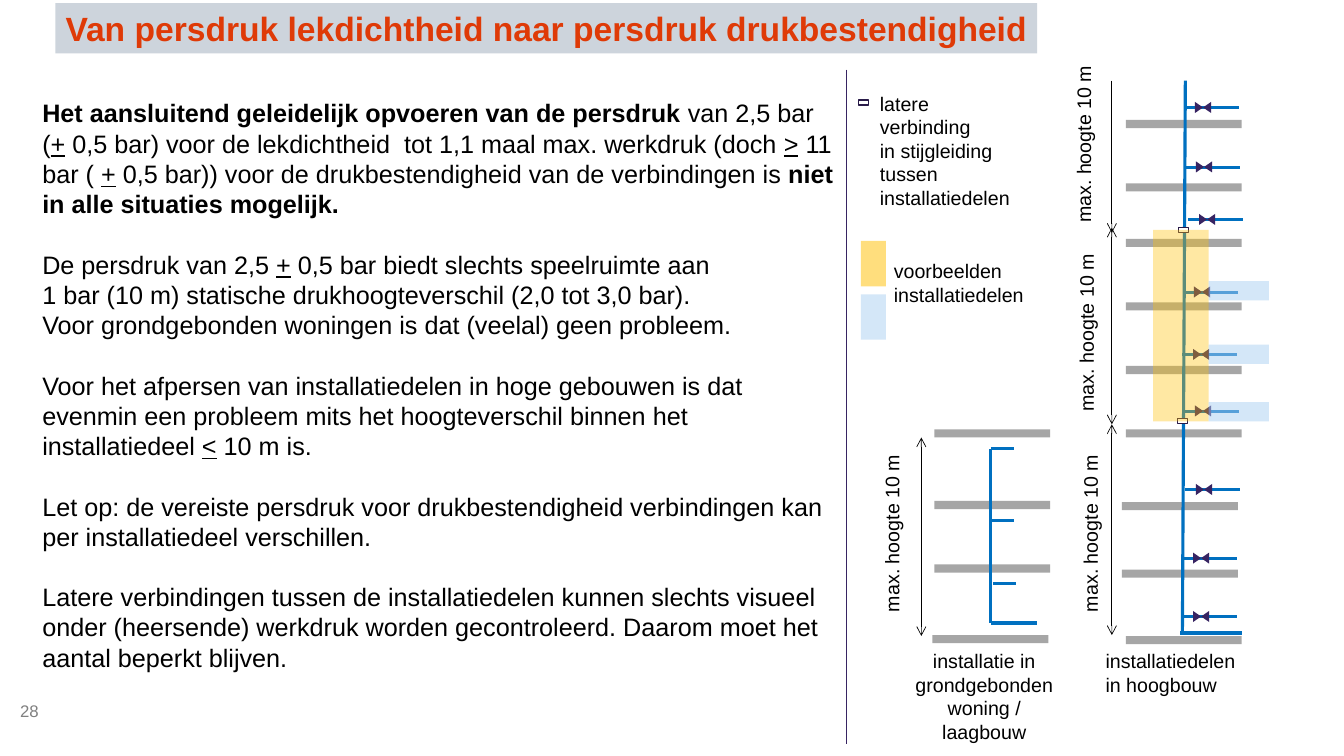
"""Build the slide on pressure testing in low and high buildings."""
from dataclasses import dataclass
from typing import Any

from lxml.etree import SubElement as Sub
from pptx import Presentation
from pptx.dml.color import RGBColor as Rgb
from pptx.enum.shapes import MSO_CONNECTOR as Conn, MSO_SHAPE as Geo
from pptx.enum.text import MSO_ANCHOR as Anchor, MSO_AUTO_SIZE as Auto, PP_ALIGN as Align
from pptx.oxml.ns import qn
from pptx.util import Pt

HEX = {
    "ink": "000000", "slab": "A6A6A6", "pipe": "0070C0", "valve": "372462",
    "edge": "291B49", "white": "FFFFFF", "gold": "FFC000", "sky": "ABD0F2",
    "band": "CDD4DC", "red": "DF3A07", "grey": "808080",
}
STYLE = {"": {}, "b": {"bold": True}, "u": {"underline": True}}


@dataclass
class Box:
    """A rectangle or other preset shape."""
    x: float
    y: float
    w: float
    h: float
    fill: str
    edge: str = ""
    alpha: int = 100
    turn: int = 0
    geo: Any = Geo.RECTANGLE


@dataclass
class Line:
    """A straight line with optional arrowheads."""
    x1: float
    y1: float
    x2: float
    y2: float
    hue: str = "pipe"
    width: float = 2.25
    ends: tuple[str, ...] = ()


@dataclass
class Label:
    """A small text box."""
    x: float
    y: float
    w: float
    h: float
    rows: list[str]
    turn: int = 0
    align: Any = Align.LEFT
    size: float = 14
    hue: str = "ink"


SLABS = [
    (667.4, 306.7), (667.4, 357.8), (667.4, 403.2), (666, 453.6),
    (804.2, 85.7), (804.2, 131), (804.2, 170.6), (804.2, 216), (804.2, 261.4),
    (804.2, 306.7), (801.4, 358.6), (801.4, 406.8), (804.2, 454.3),
]
BOTH = ("headEnd", "tailEnd")
SPANS = [
    (658.1, 312.5, 454.3, BOTH), (794.2, 57.6, 166.3, BOTH[1:]),
    (794.2, 162.7, 303.1, BOTH), (794.2, 303.1, 453.6, BOTH),
]
PIPES = [
    Line(707.8, 320.4, 707.8, 445), Line(707.8, 445, 740.9, 445, width=3),
    Line(846.7, 57.6, 844.6, 451.4), Line(843.1, 452.2, 887, 452.2, width=3),
    Line(707.8, 320.4, 724.3, 320.4), Line(707.8, 371.5, 724.3, 371.5),
    Line(709.2, 416.9, 725.8, 416.9),
]
JOINTS = [(841.7, 162.7), (841, 298.8), (613.4, 71.3)]
VALVES = [
    (846, 77), (846.7, 119.5), (848.9, 157), (845.3, 208.8), (844.6, 253.4),
    (846, 293.8), (846.7, 349.9), (844.6, 398.9), (844.6, 440.6),
]
ZONES = [
    Box(823.7, 164.2, 39.6, 136.8, "gold", alpha=36),
    *(Box(863.3, y, 43.2, 13.7, "sky", alpha=51) for y in (200.9, 246.2, 287.3)),
    Box(607.7, 217.4, 32.4, 18, "sky", alpha=51, turn=270),
    Box(607.7, 179.3, 32.4, 18, "gold", alpha=51, turn=270),
]
RISES = [(708.5, 88.6), (710.6, 223.2), (713.5, 366.5), (571.7, 366.5)]
LABELS = [
    *(Label(x, y, 131, 24.5, ["max. hoogte 10 m"], 270) for x, y in RISES),
    Label(621.4, 61.9, 111.6, 92.2,
          ["latere", "verbinding", "in stijgleiding", "tussen", "installatiedelen"]),
    Label(631.4, 181.4, 111.6, 41, ["voorbeelden", "installatiedelen"]),
    Label(644.4, 460.1, 117.4, 74.9,
          ["installatie in", "grondgebonden", "woning /", "laagbouw"], align=Align.CENTER),
    Label(782.6, 460.1, 111.6, 41, ["installatiedelen", "in hoogbouw"]),
]
TITLE = "Van persdruk lekdichtheid naar persdruk drukbestendigheid"
GAP = 21.6
BODY = [
    (0, [("Het aansluitend geleidelijk opvoeren van de persdruk ", "b"),
         ("van 2,5 bar (", ""), ("+", "u"),
         (" 0,5 bar) voor de lekdichtheid  tot 1,1 maal max. werkdruk (doch ", ""),
         (">", "u"), (" 11 bar ( ", ""), ("+", "u"),
         (" 0,5 bar)) voor de drukbestendigheid van de verbindingen is ", ""),
         ("niet in alle situaties mogelijk.", "b")]),
    (GAP, [("De persdruk van 2,5 ", ""), ("+", "u"),
           (" 0,5 bar biedt slechts speelruimte aan", ""), ("\n", ""),
           ("1 bar (10 m) statische drukhoogteverschil (2,0 tot 3,0 bar).", "")]),
    (0, [("Voor grondgebonden woningen is dat (veelal) geen probleem.", "")]),
    (GAP, [("Voor het afpersen van installatiedelen in hoge gebouwen is dat evenmin een "
            "probleem mits het hoogteverschil binnen het installatiedeel ", ""),
           ("<", "u"), (" 10 m is.", "")]),
    (GAP, [("Let op: de vereiste persdruk voor drukbestendigheid verbindingen kan per "
            "installatiedeel verschillen.", "")]),
    (GAP, [("Latere verbindingen tussen de installatiedelen kunnen slechts visueel onder "
            "(heersende) werkdruk worden gecontroleerd. Daarom moet het aantal beperkt "
            "blijven.", "")]),
]


def put(obj: Any, vals: dict[str, Any]) -> None:
    """Set each named attribute."""
    for key, val in vals.items():
        setattr(obj, key, val)


def rgb(hue: str) -> Rgb:
    """Look up a colour."""
    return Rgb.from_string(HEX[hue])


def place(shape: Any, x: float, y: float, w: float, h: float) -> None:
    """Move and size a shape."""
    put(shape, {"left": Pt(x), "top": Pt(y), "width": Pt(w), "height": Pt(h)})


def write(frame: Any, paras: list, size: float, hue: str, align: Any = Align.LEFT,
          anchor: Any = Anchor.TOP, wrap: bool = True) -> None:
    """Fill a text frame with styled paragraphs."""
    put(frame, {"word_wrap": wrap, "auto_size": Auto.NONE, "vertical_anchor": anchor})
    for num, (gap, runs) in enumerate(paras):
        para = frame.add_paragraph() if num else frame.paragraphs[0]
        props = para._p.get_or_add_pPr()
        put_xml = {"marL": "0", "indent": "0"}
        for key, val in put_xml.items():
            props.set(key, val)
        Sub(props, qn("a:buNone"))
        put(para, {"alignment": align, "line_spacing": Pt(1.2 * size),
                   "space_before": Pt(gap), "space_after": Pt(0)})
        for text, style in runs:
            if text == "\n":
                para.add_line_break()
                continue
            run = para.add_run()
            run.text = text
            put(run.font, {"name": "Arial", "size": Pt(size), "bold": False, **STYLE[style]})
            run.font.color.rgb = rgb(hue)


def draw_box(shapes: Any, box: Box) -> None:
    """Draw a filled shape."""
    shape = shapes.add_shape(box.geo, Pt(box.x), Pt(box.y), Pt(box.w), Pt(box.h))
    shape.rotation = box.turn
    shape.shadow.inherit = False
    shape.fill.solid()
    shape.fill.fore_color.rgb = rgb(box.fill)
    if box.alpha < 100:
        tint = shape._element.spPr.find(".//" + qn("a:srgbClr"))
        Sub(tint, qn("a:alpha"), val=str(box.alpha * 1000))
    if box.edge:
        shape.line.color.rgb = rgb(box.edge)
        shape.line.width = Pt(1)
    else:
        shape.line.fill.background()


def draw_line(shapes: Any, line: Line) -> None:
    """Draw a line or arrow."""
    conn = shapes.add_connector(Conn.STRAIGHT, Pt(line.x1), Pt(line.y1), Pt(line.x2), Pt(line.y2))
    conn.line.color.rgb = rgb(line.hue)
    conn.line.width = Pt(line.width)
    for end in line.ends:
        Sub(conn.line._get_or_add_ln(), qn("a:" + end), type="arrow")
    Sub(conn._element.spPr, qn("a:effectLst"))


def draw_valve(shapes: Any, x: float, y: float) -> None:
    """Draw a branch with its valve as one group."""
    parts = shapes.add_group_shape().shapes
    draw_line(parts, Line(x, y, x + 39, y))
    draw_box(parts, Box(x + 9.4, y - 6, 7.9, 11.5, "valve", turn=270, geo=Geo.FLOWCHART_COLLATE))


def draw_label(shapes: Any, label: Label) -> None:
    """Draw a text box."""
    box = shapes.add_textbox(Pt(label.x), Pt(label.y), Pt(label.w), Pt(label.h))
    box.rotation = label.turn
    paras = [(0, [(row, "")]) for row in label.rows]
    write(box.text_frame, paras, label.size, label.hue, label.align)


def main() -> None:
    """Build and save the deck."""
    deck = Presentation()
    put(deck, {"slide_width": Pt(960), "slide_height": Pt(540)})
    slide = deck.slides.add_slide(deck.slide_layouts[1])
    shapes = slide.shapes
    title, body = shapes.title, slide.placeholders[1]
    place(title, 39.6, 2.2, 701.3, 36)
    title.fill.solid()
    title.fill.fore_color.rgb = rgb("band")
    write(title.text_frame, [(0, [(TITLE, "b")])], 24, "red", wrap=False)
    place(body, 23, 66.2, 581.8, 421.9)
    write(body.text_frame, BODY, 18, "ink")
    for x, y in SLABS:
        draw_box(shapes, Box(x, y, 82.8, 5.8, "slab"))
    for x, top, end, heads in SPANS:
        draw_line(shapes, Line(x, top, x, end, "ink", 0.5, heads))
    for pipe in PIPES:
        draw_line(shapes, pipe)
    for x, y in JOINTS:
        draw_box(shapes, Box(x, y, 7.2, 3.6, "white", "edge"))
    for x, y in VALVES:
        draw_valve(shapes, x, y)
    for zone in ZONES:
        draw_box(shapes, zone)
    for label in LABELS:
        draw_label(shapes, label)
    draw_line(shapes, Line(604.8, 49.7, 604.8, 531.4, "valve", 0.5))
    page = shapes.add_textbox(Pt(14.4), Pt(493.2), Pt(51.1), Pt(28.8)).text_frame
    put(page, {"margin_" + side: 0 for side in ("left", "top", "right", "bottom")})
    write(page, [(0, [("28", "")])], 12, "grey", anchor=Anchor.MIDDLE)
    deck.save("out.pptx")


if __name__ == "__main__":
    main()
